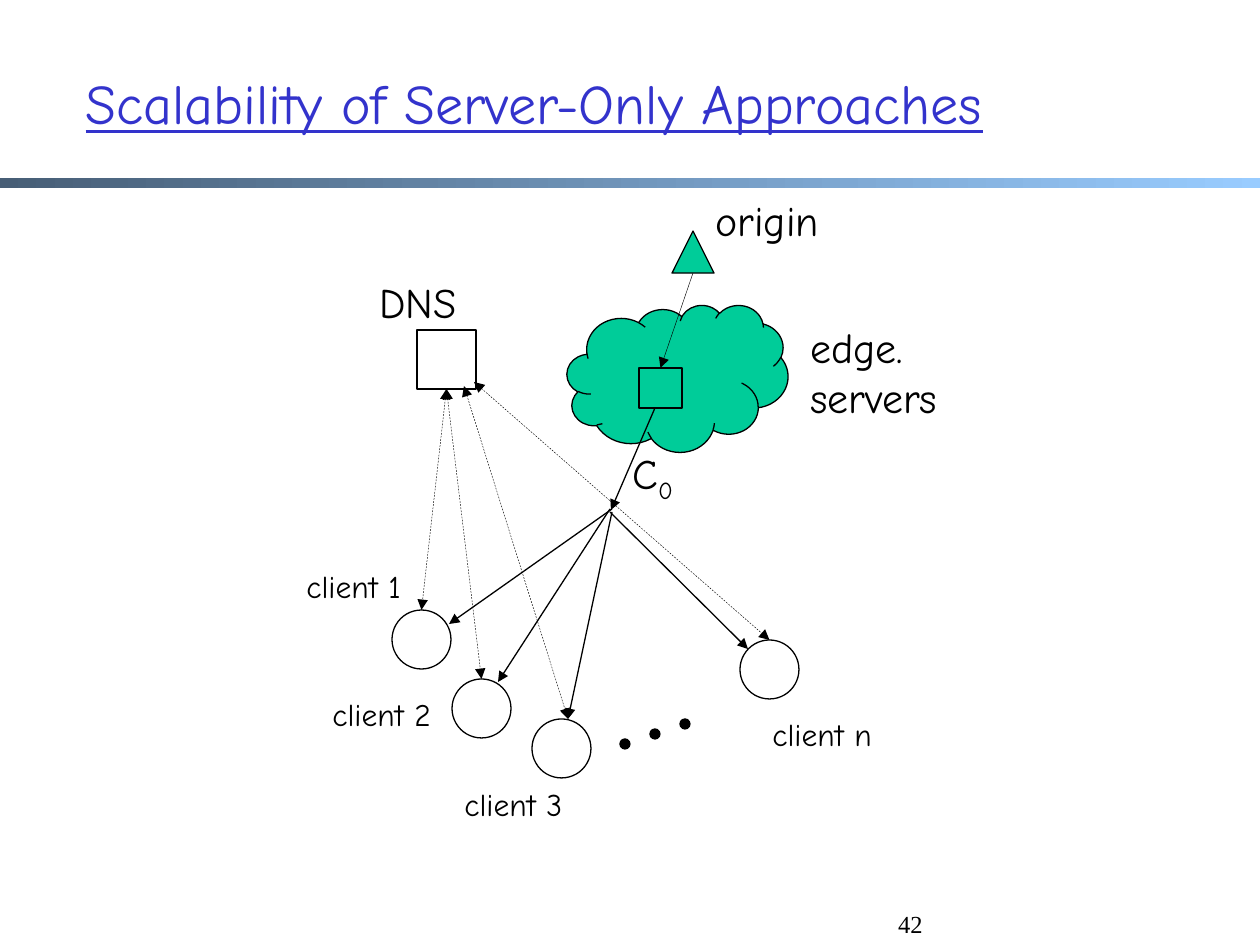
"""Build the slide on the scalability of server-only approaches."""
import lxml.etree
import pptx
import pptx.dml.color
import pptx.enum.dml
import pptx.enum.shapes
import pptx.enum.text
import pptx.oxml.ns
import pptx.util

RGBColor = pptx.dml.color.RGBColor
Shape = pptx.enum.shapes.MSO_SHAPE
Anchor = pptx.enum.text.MSO_ANCHOR
Align = pptx.enum.text.PP_ALIGN
qn = pptx.oxml.ns.qn

BLACK = RGBColor(0x00, 0x00, 0x00)
GREEN = RGBColor(0x00, 0xCC, 0x99)
TITLE_BLUE = RGBColor(0x33, 0x33, 0xCC)
BAR_DARK = RGBColor(0x47, 0x5E, 0x76)
BAR_LIGHT = RGBColor(0x99, 0xCC, 0xFF)

PX_PER_INCH = 126
TOP, BOTTOM = 0, 2
CLIENT_SIZE = 59


def px(*lengths):
    return [round(length * 914400 / PX_PER_INCH) for length in lengths]


class Diagram:
    font = "Comic Neue"
    outline = 0.75
    thin = 0.25

    def __init__(self, slide):
        self.slide = slide

    def format_run(self, run, size, color=BLACK, font=None):
        run.font.name = font or self.font
        run.font.size = pptx.util.Pt(size)
        run.font.color.rgb = color

    def title(self, text, box):
        shape = self.slide.shapes.title
        shape.left, shape.top, shape.width, shape.height = px(*box)
        frame = shape.text_frame
        frame.text = text
        frame.word_wrap = True
        frame.auto_size = pptx.enum.text.MSO_AUTO_SIZE.NONE
        frame.vertical_anchor = Anchor.MIDDLE
        frame.paragraphs[0].alignment = Align.LEFT
        run = frame.paragraphs[0].runs[0]
        self.format_run(run, 32, TITLE_BLUE)
        run.font.underline = True

    def bar(self, box):
        shape = self.slide.shapes.add_shape(Shape.RECTANGLE, *px(*box))
        shape.shadow.inherit = False
        shape.line.fill.background()
        shape.fill.gradient()
        shape.fill.gradient_angle = 0
        for stop, color in zip(shape.fill.gradient_stops, (BAR_DARK, BAR_LIGHT)):
            stop.color.rgb = color

    def shape(self, kind, box, fill=None):
        shape = self.slide.shapes.add_shape(kind, *px(*box))
        shape.shadow.inherit = False
        shape.line.color.rgb = BLACK
        shape.line.width = pptx.util.Pt(self.outline)
        if fill is None:
            shape.fill.background()
        else:
            shape.fill.solid()
            shape.fill.fore_color.rgb = fill
        return shape

    def label(self, text, box, size, font=None, subscript=None,
              anchor=Anchor.TOP, align=Align.LEFT):
        frame = self.slide.shapes.add_textbox(*px(*box)).text_frame
        frame.text = text
        frame.word_wrap = True
        frame.vertical_anchor = anchor
        paragraph = frame.paragraphs[0]
        paragraph.alignment = align
        if subscript:
            run = paragraph.add_run()
            run.text = subscript
            run._r.get_or_add_rPr().set("baseline", "-25000")
        for run in paragraph.runs:
            self.format_run(run, size, font=font)

    def arrow(self, start, end, width=None, two_way=False, source=None, target=None):
        connector = self.slide.shapes.add_connector(
            pptx.enum.shapes.MSO_CONNECTOR.STRAIGHT, *px(*start, *end))
        if source is not None:
            connector.begin_connect(source, BOTTOM)
        if target is not None:
            connector.end_connect(target, TOP)
        connector.line.color.rgb = BLACK
        connector.line.width = pptx.util.Pt(width or self.outline)
        if two_way:
            connector.line.dash_style = pptx.enum.dml.MSO_LINE.DASH
        properties = connector.element.spPr
        line = properties.find(qn("a:ln"))
        for tag in ("a:headEnd", "a:tailEnd") if two_way else ("a:tailEnd",):
            lxml.etree.SubElement(line, qn(tag), type="triangle")
        lxml.etree.SubElement(properties, qn("a:effectLst"))


def main():
    presentation = pptx.Presentation()
    presentation.slide_width, presentation.slide_height = px(1260, 945)
    slide = presentation.slides.add_slide(presentation.slide_layouts[5])
    diagram = Diagram(slide)

    diagram.bar((0, 178, 1260, 10))
    diagram.title("Scalability of Server-Only Approaches", (73, 42, 1144, 120))
    diagram.label("42", (389, 882, 546, 63), 14, font="Times New Roman",
                  anchor=Anchor.BOTTOM, align=Align.RIGHT)

    diagram.shape(Shape.CLOUD, (567, 305, 221, 147), GREEN)
    edge_server = diagram.shape(Shape.RECTANGLE, (639, 368, 43, 40))
    dns = diagram.shape(Shape.RECTANGLE, (417, 330, 59, 59))
    diagram.shape(Shape.ISOSCELES_TRIANGLE, (672, 231, 42, 42), GREEN)
    clients = [
        diagram.shape(Shape.OVAL, (left, top, CLIENT_SIZE, CLIENT_SIZE))
        for left, top in ((392, 610), (452, 679), (532, 719), (740, 640))
    ]
    for step in range(3):
        diagram.shape(Shape.OVAL, (620 + 30 * step, 739 - 10 * step, 10, 10), BLACK)

    for start, end in (
        ((655, 408), (611, 510)),
        ((612, 509), (449, 624)),
        ((610, 509), (498, 682)),
        ((612, 512), (568, 719)),
        ((610, 512), (748, 649)),
    ):
        diagram.arrow(start, end)
    diagram.arrow((693, 273), (660, 368), diagram.thin, target=edge_server)

    for start, end, source, target in (
        ((446, 389), (422, 610), dns, clients[0]),
        ((446, 389), (482, 679), dns, clients[1]),
        ((464, 386), (568, 719), None, None),
        ((474, 382), (769, 640), None, clients[3]),
    ):
        diagram.arrow(start, end, diagram.thin, True, source, target)

    diagram.label("origin", (703, 188, 204, 64), 24)
    diagram.label("DNS", (367, 270, 169, 50), 24)
    diagram.label("edge. servers", (798, 315, 204, 115), 24)
    diagram.label("C", (620, 441, 89, 50), 24, subscript="0")
    for name, left, top in (
        ("1", 294, 561), ("2", 320, 689), ("3", 452, 779), ("n", 760, 709),
    ):
        diagram.label(f"client {name}", (left, top, 139, 50), 18)

    presentation.save("out.pptx")


if __name__ == "__main__":
    main()
